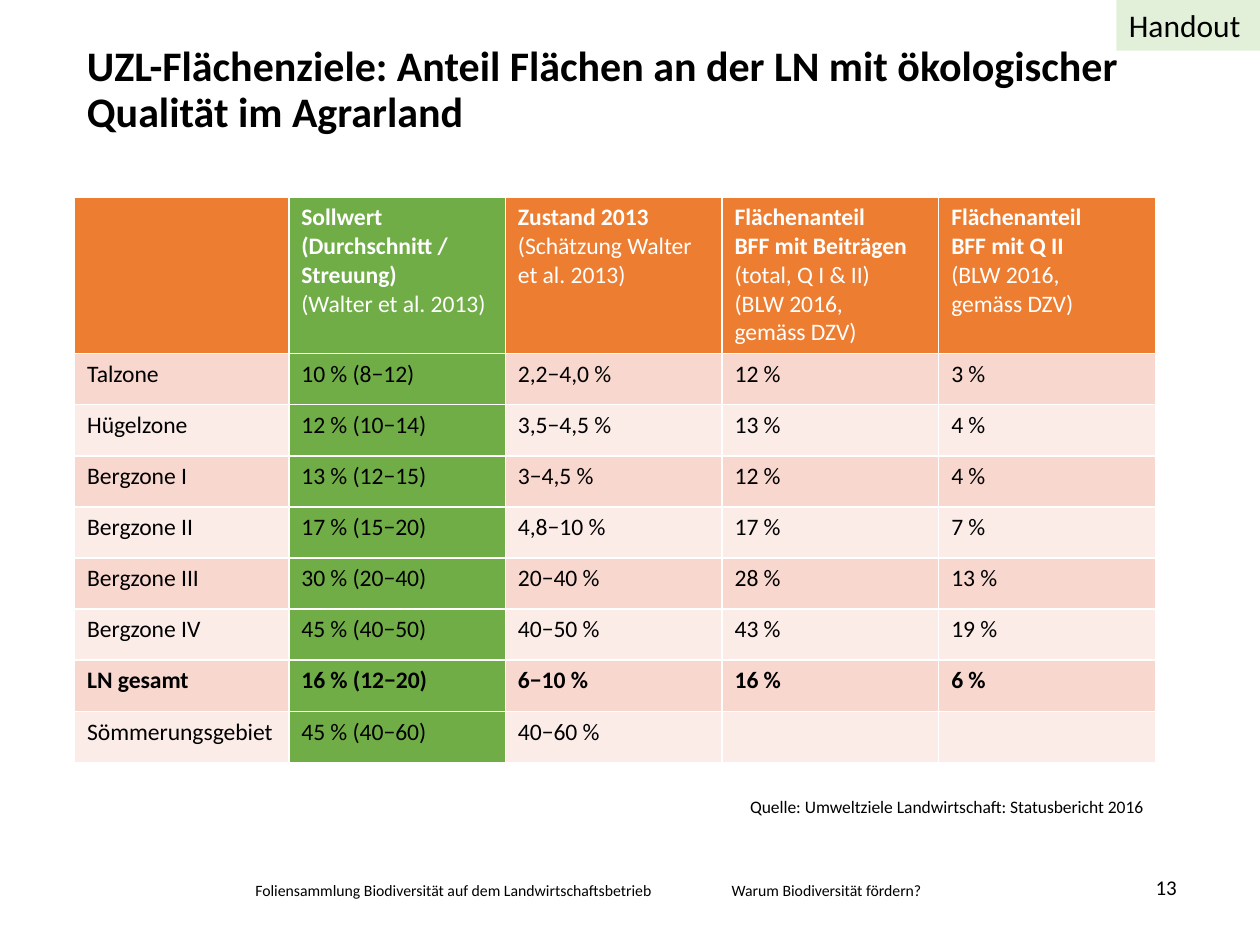
"""Build the slide on area targets with ecological quality in farmland."""
from pptx import Presentation
from pptx.dml.color import RGBColor
from pptx.enum import shapes, text
from pptx.util import Pt

BLACK = RGBColor(0x00, 0x00, 0x00)
WHITE = RGBColor(0xFF, 0xFF, 0xFF)
ORANGE = RGBColor(0xED, 0x7D, 0x31)
GREEN = RGBColor(0x70, 0xAD, 0x47)
ROSE = RGBColor(0xF8, 0xD7, 0xCE)
PALE_ROSE = RGBColor(0xFC, 0xEC, 0xE8)
PALE_GREEN = RGBColor(0xE2, 0xF0, 0xD9)

TARGET_COLUMN = 1
TOTAL_ROW = "LN gesamt"
HEADINGS = [
    ("", ""),
    ("Sollwert\n(Durchschnitt /\vStreuung)", "(Walter et al. 2013)"),
    ("Zustand 2013", "(Schätzung Walter et al. 2013)"),
    ("Flächenanteil \vBFF mit Beiträgen", "(total, Q I & II)\n(BLW 2016, \vgemäss DZV)"),
    ("Flächenanteil \vBFF mit Q II", "(BLW 2016, \vgemäss DZV)"),
]
ZONES = [
    ("Talzone", "10 % (8−12)", "2,2−4,0 %", "12 %", "3 %"),
    ("Hügelzone", "12 % (10−14)", "3,5−4,5 %", "13 %", "4 %"),
    ("Bergzone I", "13 % (12−15)", "3−4,5 %", "12 %", "4 %"),
    ("Bergzone II", "17 % (15−20)", "4,8−10 %", "17 %", "7 %"),
    ("Bergzone III", "30 % (20−40)", "20−40 %", "28 %", "13 %"),
    ("Bergzone IV", "45 % (40−50)", "40−50 %", "43 %", "19 %"),
    (TOTAL_ROW, "16 % (12−20)", "6−10 %", "16 %", "6 %"),
    ("Sömmerungsgebiet", "45 % (40−60)", "40−60 %", "", ""),
]


class SlideBuilder:
    """Hold the text style and the current slide."""

    font = "Calibri"
    table_size = 13.5

    def __init__(self, slide):
        self.slide = slide

    def style(self, paragraph, size, color=BLACK, bold=False):
        """Format every run of a paragraph."""
        for run in paragraph.runs:
            run.font.name = self.font
            run.font.size = Pt(size)
            run.font.bold = bold
            run.font.color.rgb = color

    def title(self, wording, left, top, width, height):
        """Fill and place the title placeholder."""
        heading = self.slide.shapes.title
        heading.left, heading.top = Pt(left), Pt(top)
        heading.width, heading.height = Pt(width), Pt(height)
        frame = heading.text_frame
        frame.text = wording
        frame.margin_left = frame.margin_right = frame.margin_top = frame.margin_bottom = 0
        frame.vertical_anchor = text.MSO_ANCHOR.TOP
        frame.auto_size = text.MSO_AUTO_SIZE.NONE
        paragraph = frame.paragraphs[0]
        paragraph.alignment = text.PP_ALIGN.LEFT
        paragraph.line_spacing = 0.9
        self.style(paragraph, 24, bold=True)

    def label(self, wording, left, top, width, height, size, align=text.PP_ALIGN.LEFT):
        """Add a text box and return its frame."""
        box = self.slide.shapes.add_textbox(Pt(left), Pt(top), Pt(width), Pt(height))
        frame = box.text_frame
        frame.word_wrap = True
        frame.text = wording
        frame.paragraphs[0].alignment = align
        self.style(frame.paragraphs[0], size)
        return frame

    def tag(self, wording, left, top, width, height):
        """Add a filled rectangle with a short text."""
        badge = self.slide.shapes.add_shape(
            shapes.MSO_SHAPE.RECTANGLE, Pt(left), Pt(top), Pt(width), Pt(height))
        badge.shadow.inherit = False
        badge.fill.solid()
        badge.fill.fore_color.rgb = PALE_GREEN
        badge.line.fill.background()
        badge.text_frame.text = wording
        badge.text_frame.paragraphs[0].alignment = text.PP_ALIGN.LEFT
        self.style(badge.text_frame.paragraphs[0], 18)

    def cell(self, cell, strong, plain, fill, color):
        """Fill a cell with bold paragraphs followed by regular ones."""
        cell.fill.solid()
        cell.fill.fore_color.rgb = fill
        cell.text_frame.text = "\n".join(part for part in (strong, plain) if part)
        bold_count = len(strong.split("\n")) if strong else 0
        for index, paragraph in enumerate(cell.text_frame.paragraphs):
            self.style(paragraph, self.table_size, color, index < bold_count)
            if not paragraph.runs:
                paragraph.font.size = Pt(self.table_size)

    def table(self, left, top, widths, header_height, row_height):
        """Add the table of zones."""
        total_height = header_height + row_height * len(ZONES)
        grid = self.slide.shapes.add_table(
            len(ZONES) + 1, len(widths), Pt(left), Pt(top),
            Pt(sum(widths)), Pt(total_height)).table
        for column, width in zip(grid.columns, widths):
            column.width = Pt(width)
        for index, row in enumerate(grid.rows):
            row.height = Pt(row_height if index else header_height)
        for column, (strong, plain) in enumerate(HEADINGS):
            fill = GREEN if column == TARGET_COLUMN else ORANGE
            self.cell(grid.cell(0, column), strong, plain, fill, WHITE)
        for row, zone in enumerate(ZONES, 1):
            band = ROSE if row % 2 else PALE_ROSE
            for column, value in enumerate(zone):
                fill = GREEN if column == TARGET_COLUMN else band
                strong, plain = (value, "") if zone[0] == TOTAL_ROW else ("", value)
                self.cell(grid.cell(row, column), strong, plain, fill, BLACK)


def main():
    """Create the presentation and save it."""
    deck = Presentation()
    deck.slide_width, deck.slide_height = Pt(720), Pt(540)
    builder = SlideBuilder(deck.slides.add_slide(deck.slide_layouts[5]))
    right = text.PP_ALIGN.RIGHT

    builder.label("Foliensammlung Biodiversität auf dem Landwirtschaftsbetrieb",
                  138.8, 499.6, 249, 18, 9)
    builder.label("Warum Biodiversität fördern?", 411, 499.6, 164, 18, 9)
    builder.title("UZL-Flächenziele: Anteil Flächen an der LN mit ökologischer "
                  "Qualität im Agrarland", 49.7, 26, 623, 50)
    builder.table(42.6, 112.6, [122.4] + [123.8] * 4, 89.5, 29.2)
    page_number = builder.label("13", 610, 489.6, 62.5, 28, 12, right)
    page_number.margin_left = page_number.margin_right = 0
    page_number.vertical_anchor = text.MSO_ANCHOR.BOTTOM
    builder.label("Quelle: Umweltziele Landwirtschaft: Statusbericht 2016",
                  382.3, 451.4, 278, 19.4, 10, right)
    builder.tag("Handout", 638, 0, 82, 29)

    deck.save("out.pptx")


if __name__ == "__main__":
    main()
